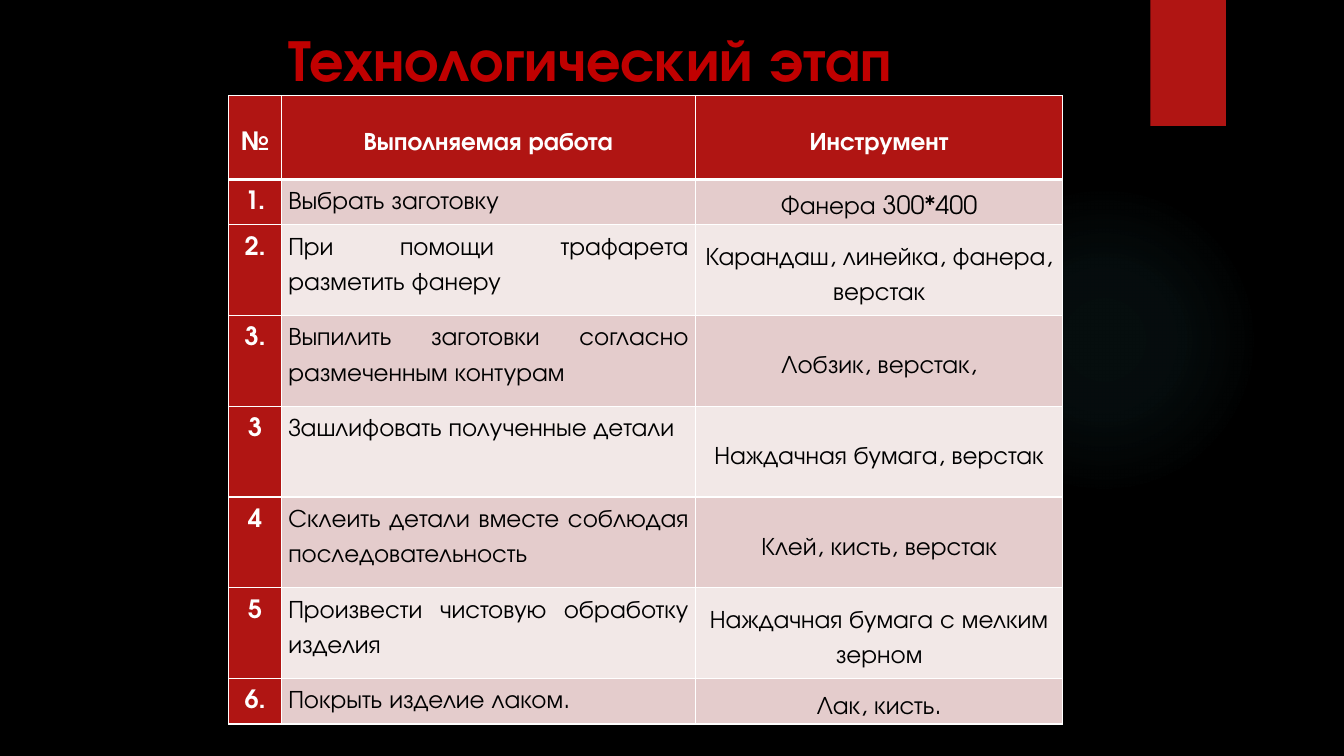
from lxml import etree
from pptx import Presentation
from pptx.dml.color import RGBColor
from pptx.enum.shapes import MSO_SHAPE as Shape
from pptx.enum.text import MSO_ANCHOR as Anchor, PP_ALIGN as Align
from pptx.oxml import parse_xml
from pptx.oxml.ns import nsdecls, qn
from pptx.util import Inches, Pt

RED, WHITE, BLACK = "B01513", "FFFFFF", "000000"
BANDS = ["E4CCCC", "F2E8E7"]
COLS = [0.52, 4.11, 3.64]
HEIGHTS = [0.83, 0.42] + [0.9] * 5 + [0.42]
HEAD = ("№", "Выполняемая работа", "Инструмент")
STEPS = [
    ("1.", "Выбрать заготовку", "Фанера 300*400"),
    ("2.", "При помощи трафарета разметить фанеру",
     "Карандаш, линейка, фанера, верстак"),
    ("3.", "Выпилить заготовки согласно размеченным контурам",
     "Лобзик, верстак,"),
    ("3", "Зашлифовать полученные детали", "Наждачная бумага, верстак"),
    ("4", "Склеить детали вместе соблюдая последовательность",
     "Клей, кисть, верстак"),
    ("5", "Произвести чистовую обработку изделия",
     "Наждачная бумага с мелким зерном"),
    ("6.", "Покрыть изделие лаком.", "Лак, кисть."),
]


def color(code):
    return RGBColor.from_string(code)


def write(frame, text, size=18, ink=BLACK, bold=False, align=Align.CENTER,
          space=1.0):
    frame.word_wrap = True
    para = frame.paragraphs[0]
    para.alignment = align
    para.line_spacing = space
    run = para.add_run()
    run.text = text
    font = run.font
    font.name = "TeX Gyre Adventor"
    font.size = Pt(size)
    font.bold = bold
    font.color.rgb = color(ink)


def border(cell, base):
    """Draw white cell edges; base is the width of the bottom one in points."""
    props = cell._tc.get_or_add_tcPr()
    for spot, (side, width) in enumerate(
            [("L", 1), ("R", 1), ("T", 1), ("B", base)]):
        props.insert(spot, parse_xml(
            f'<a:ln{side} {nsdecls("a")} w="{Pt(width)}"><a:solidFill>'
            f'<a:srgbClr val="{WHITE}"/></a:solidFill></a:ln{side}>'))


class Deck:
    def __init__(self, back):
        self.file = Presentation()
        self.file.slide_width = Inches(13.33)
        self.file.slide_height = Inches(7.5)
        self.slide = self.file.slides.add_slide(self.file.slide_layouts[6])
        fill = self.slide.background.fill
        fill.solid()
        fill.fore_color.rgb = color(back)

    def shape(self, kind, box, fill):
        item = self.slide.shapes.add_shape(kind, *map(Inches, box))
        item.shadow.inherit = False
        item.line.fill.background()
        item.fill.solid()
        item.fill.fore_color.rgb = color(fill)
        return item

    def glow(self, box, tint, stops):
        """Add a round glow; stops pair a position with an opacity, in percent."""
        item = self.shape(Shape.OVAL, box, tint)
        marks = "".join(
            f'<a:gs pos="{pos * 1000}"><a:srgbClr val="{tint}">'
            f'<a:alpha val="{alpha * 1000}"/></a:srgbClr></a:gs>'
            for pos, alpha in stops)
        props = item._element.spPr
        old = props.find(qn("a:solidFill"))
        props.replace(old, parse_xml(
            f'<a:gradFill {nsdecls("a")}><a:gsLst>{marks}</a:gsLst>'
            '<a:path path="circle"><a:fillToRect l="50000" t="50000" '
            'r="50000" b="50000"/></a:path></a:gradFill>'))

    def title(self, box, text, **style):
        frame = self.slide.shapes.add_textbox(*map(Inches, box)).text_frame
        frame.vertical_anchor = Anchor.MIDDLE
        write(frame, text, **style)

    def table(self, left, top, rows):
        grid = self.slide.shapes.add_table(
            len(rows), len(COLS), Inches(left), Inches(top),
            Inches(sum(COLS)), Inches(sum(HEIGHTS))).table
        for col, width in zip(grid.columns, COLS):
            col.width = Inches(width)
        for row, height in zip(grid.rows, HEIGHTS):
            row.height = Inches(height)
        for r, row in enumerate(rows):
            for c, text in enumerate(row):
                self.cell(grid.cell(r, c), text, r, c)

    def cell(self, cell, text, r, c):
        strong = r == 0 or c == 0
        cell.margin_left = cell.margin_right = Inches(0.07)
        cell.margin_top = cell.margin_bottom = 0
        centred = r == 0 or c == 2
        cell.vertical_anchor = Anchor.MIDDLE if centred else Anchor.TOP
        cell.fill.solid()
        cell.fill.fore_color.rgb = color(RED if strong else BANDS[(r - 1) % 2])
        border(cell, 1 if r else 3)
        write(cell.text_frame, text, ink=WHITE if strong else BLACK,
              bold=strong, space=1.5,
              align=Align.JUSTIFY if r and c == 1 else Align.CENTER)


def main():
    deck = Deck(BLACK)
    deck.glow((9.41, 1.83, 3.08, 3.08), "50B9C1", [(0, 7), (36, 6), (69, 0)])
    deck.shape(Shape.RECTANGLE, (11.41, 0, 0.75, 1.25), RED)
    deck.title((0.71, 0.21, 10.29, 0.74), "Технологический этап",
               size=42, ink="C00000", bold=True)
    deck.table(2.27, 0.95, [HEAD] + STEPS)
    deck.file.save("out.pptx")


if __name__ == "__main__":
    main()
